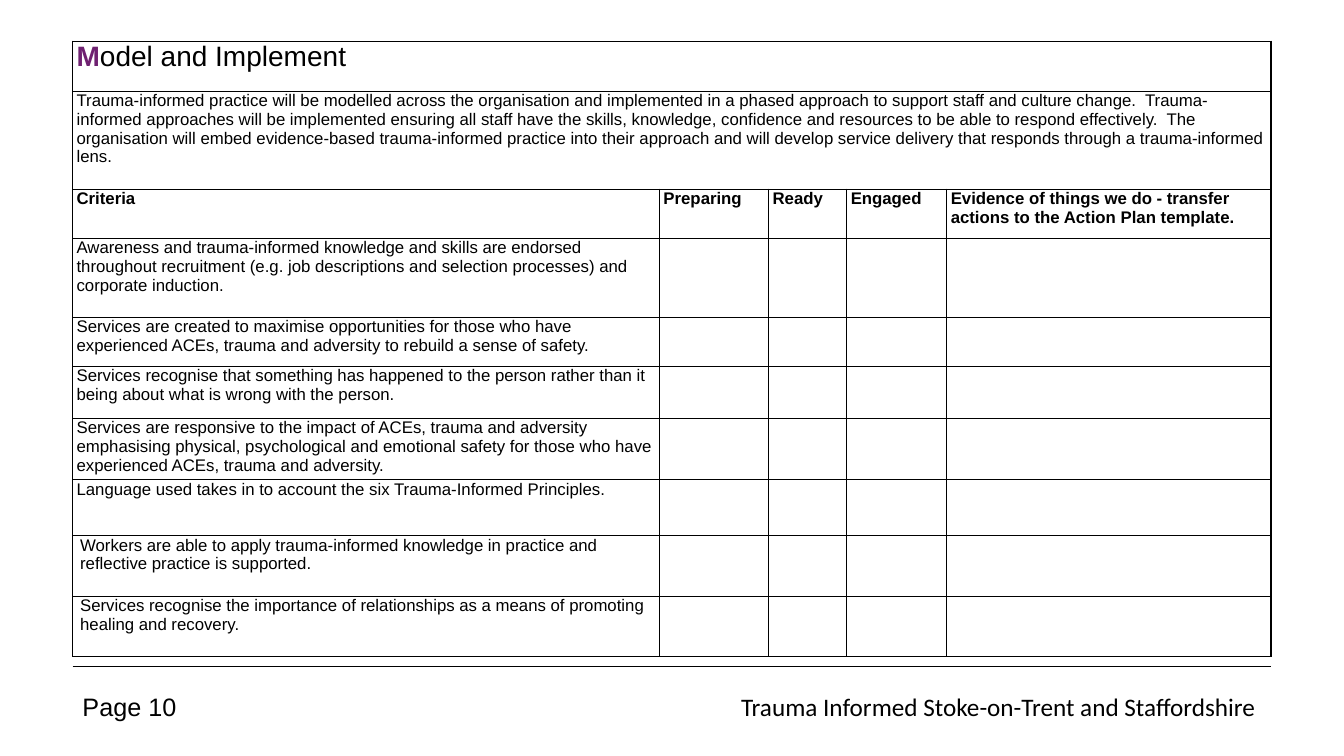
from dataclasses import dataclass

from lxml import etree
from pptx import Presentation
from pptx import util as u
from pptx.dml.color import RGBColor
from pptx.enum import shapes, text
from pptx.oxml import ns

BLACK, PURPLE = "000000", "6F2171"
LEFT, RIGHT = 1.83, 32.03
COLUMN_WIDTHS = [14.79, 2.75, 1.97, 2.52, 8.17]
TITLE = "Model and Implement"
SUMMARY = (
    "Trauma-informed practice will be modelled across the organisation and implemented in a "
    "phased approach to support staff and culture change.  Trauma-informed approaches will be "
    "implemented ensuring all staff have the skills, knowledge, confidence and resources to be "
    "able to respond effectively.  The organisation will embed evidence-based trauma-informed "
    "practice into their approach and will develop service delivery that responds through a "
    "trauma-informed lens."
)
HEADINGS = ["Criteria", "Preparing", "Ready", "Engaged",
            "Evidence of things we do - transfer actions to the Action Plan template."]


@dataclass
class Row:
    height: float
    texts: list[str]
    merged: bool = False
    bold: bool = False
    margin: float = 0.1


@dataclass
class Footer:
    left: float
    width: float
    words: str
    font: str
    align: text.PP_ALIGN


ROWS = [
    Row(1.26, [TITLE], merged=True),
    Row(2.47, [SUMMARY], merged=True),
    Row(1.24, HEADINGS, bold=True),
    Row(1.99, ["Awareness and trauma-informed knowledge and skills are endorsed throughout "
               "recruitment (e.g. job descriptions and selection processes) and corporate "
               "induction."]),
    Row(1.23, ["Services are created to maximise opportunities for those who have experienced "
               "ACEs, trauma and adversity to rebuild a sense of safety."]),
    Row(1.32, ["Services recognise that something has happened to the person rather than it "
               "being about what is wrong with the person."]),
    Row(1.54, ["Services are responsive to the impact of ACEs, trauma and adversity emphasising "
               "physical, psychological and emotional safety for those who have experienced "
               "ACEs, trauma and adversity."]),
    Row(1.41, ["Language used takes in to account the six Trauma-Informed Principles."]),
    Row(1.53, ["Workers are able to apply trauma-informed knowledge in practice and reflective "
               "practice is supported."], margin=0.19),
    Row(1.51, ["Services recognise the importance of relationships as a means of promoting "
               "healing and recovery."], margin=0.19),
]
FOOTERS = [
    Footer(LEFT, 3.05, "Page 10", "Arial", text.PP_ALIGN.LEFT),
    Footer(18.36, 13.67, "Trauma Informed Stoke-on-Trent and Staffordshire ", "Calibri",
           text.PP_ALIGN.RIGHT),
]


def rgb(value: str) -> RGBColor:
    return RGBColor.from_string(value)


def set_all(target, values: dict) -> None:
    for name, value in values.items():
        setattr(target, name, value)


def add_run(p, words: str, size: float, font: str = "Arial", bold: bool = False,
            color: str = BLACK) -> None:
    r = p.add_run()
    r.text = words
    set_all(r.font, {"size": u.Pt(size), "name": font, "bold": bold})
    r.font.color.rgb = rgb(color)


def add_borders(cell) -> None:
    tc_pr = cell._tc.get_or_add_tcPr()
    for side in ("lnL", "lnR", "lnT", "lnB"):
        ln = etree.SubElement(tc_pr, ns.qn(f"a:{side}"), w=str(u.Pt(1)))
        fill = etree.SubElement(ln, ns.qn("a:solidFill"))
        etree.SubElement(fill, ns.qn("a:srgbClr"), val=BLACK)


def add_criteria_table(s) -> None:
    table = s.shapes.add_table(
        len(ROWS), len(COLUMN_WIDTHS), u.Cm(LEFT), u.Cm(1.04), u.Cm(sum(COLUMN_WIDTHS)),
        u.Cm(sum(row.height for row in ROWS))).table
    set_all(table, {"first_row": False, "horz_banding": False})
    for column, width in zip(table.columns, COLUMN_WIDTHS):
        column.width = u.Cm(width)
    for i, row in enumerate(ROWS):
        table.rows[i].height = u.Cm(row.height)
        for cell in table.rows[i].cells:
            add_borders(cell)
            cell.fill.background()
            set_all(cell, {"margin_left": u.Cm(row.margin), "margin_right": u.Cm(row.margin),
                           "margin_top": 0, "margin_bottom": 0})
        if row.merged:
            table.cell(i, 0).merge(table.cell(i, len(COLUMN_WIDTHS) - 1))
        for j, words in enumerate(row.texts):
            p = table.cell(i, j).text_frame.paragraphs[0]
            if words == TITLE:
                add_run(p, words[0], 20, bold=True, color=PURPLE)
                add_run(p, words[1:], 20)
            else:
                add_run(p, words, 12, bold=row.bold)


def add_footer(s, footer: Footer) -> None:
    tf = s.shapes.add_textbox(u.Cm(footer.left), u.Cm(17.3), u.Cm(footer.width),
                              u.Cm(1.03)).text_frame
    set_all(tf, {"word_wrap": True, "auto_size": text.MSO_AUTO_SIZE.SHAPE_TO_FIT_TEXT})
    p = tf.paragraphs[0]
    p.alignment = footer.align
    add_run(p, footer.words, 18, footer.font)


def add_footer_rule(s) -> None:
    y = u.Cm(16.79)
    sp = s.shapes.add_connector(shapes.MSO_CONNECTOR.STRAIGHT, u.Cm(LEFT), y, u.Cm(RIGHT), y)
    sp.line.color.rgb = rgb(BLACK)
    sp.line.width = u.Pt(0.5)
    etree.SubElement(sp._element.spPr, ns.qn("a:effectLst"))


def main() -> None:
    prs = Presentation()
    set_all(prs, {"slide_width": u.Cm(33.87), "slide_height": u.Cm(19.05)})
    s = prs.slides.add_slide(prs.slide_layouts[6])
    add_footer_rule(s)
    add_criteria_table(s)
    for footer in FOOTERS:
        add_footer(s, footer)
    prs.save("out.pptx")


if __name__ == "__main__":
    main()
